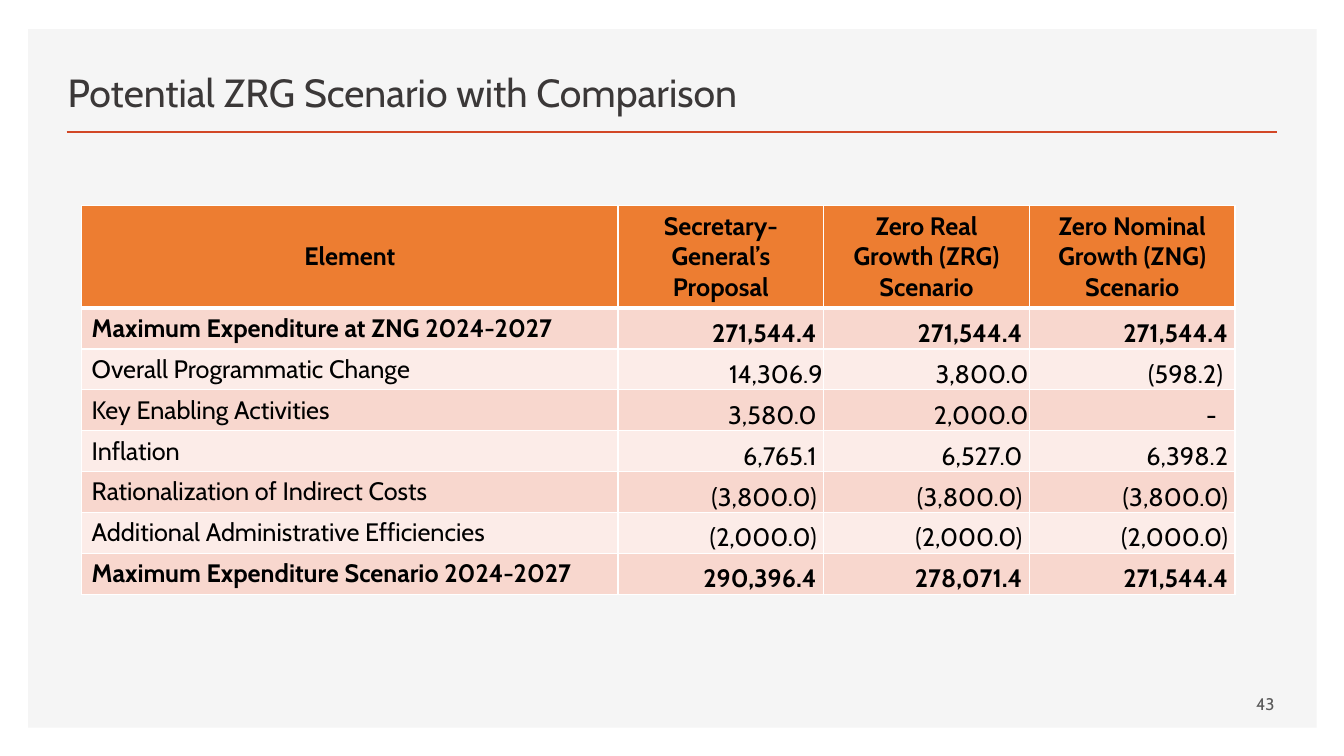
from dataclasses import dataclass

from lxml import etree
from pptx import Presentation
from pptx.dml.color import RGBColor
from pptx.enum.shapes import MSO_CONNECTOR, MSO_SHAPE
from pptx.enum.text import MSO_ANCHOR, MSO_AUTO_SIZE, PP_ALIGN
from pptx.oxml.ns import qn
from pptx.util import Emu, Pt

LEFT, CENTER, RIGHT = PP_ALIGN.LEFT, PP_ALIGN.CENTER, PP_ALIGN.RIGHT
TOP, MIDDLE, BOTTOM = MSO_ANCHOR.TOP, MSO_ANCHOR.MIDDLE, MSO_ANCHOR.BOTTOM
RECT, STRAIGHT = MSO_SHAPE.RECTANGLE, MSO_CONNECTOR.STRAIGHT
NO_AUTOFIT = MSO_AUTO_SIZE.NONE
EMU_PER_PX = 9144


@dataclass(frozen=True)
class Theme:
    font: str = "Cabin"
    panel: str = "F5F5F5"
    rule: str = "D24726"
    title: str = "3B3838"
    number: str = "595959"
    text: str = "000000"
    header: str = "ED7D31"
    bands: tuple[str, str] = ("F8D7CE", "FCECE8")
    border: str = "FFFFFF"
    title_size: int = 28
    table_size: int = 18
    number_size: int = 12


@dataclass(frozen=True)
class Amount:
    text: str
    gap: int = 7


@dataclass(frozen=True)
class BudgetRow:
    element: str
    amounts: tuple[Amount, Amount, Amount]
    bold: bool = False


THEME = Theme()
COLUMN_WIDTHS = (532, 204, 204, 204)
HEADER_HEIGHT, ROW_HEIGHT = 100, 40
CELL_MARGINS = (10, 5, 10, 5)
HEADERS = (
    "Element",
    "Secretary-General’s Proposal",
    "Zero Real Growth (ZRG) Scenario",
    "Zero Nominal Growth (ZNG) Scenario",
)
ROWS = (
    BudgetRow("Maximum Expenditure at ZNG 2024-2027", (Amount("271,544.4"),) * 3, True),
    BudgetRow("Overall Programmatic Change",
              (Amount("14,306.9", 1), Amount("3,800.0", 1), Amount("(598.2)", 12))),
    BudgetRow("Key Enabling Activities",
              (Amount("3,580.0"), Amount("2,000.0", 1), Amount("-", 18))),
    BudgetRow("Inflation", (Amount("6,765.1"), Amount("6,527.0"), Amount("6,398.2"))),
    BudgetRow("Rationalization of Indirect Costs", (Amount("(3,800.0)"),) * 3),
    BudgetRow("Additional Administrative Efficiencies", (Amount("(2,000.0)"),) * 3),
    BudgetRow("Maximum Expenditure Scenario 2024-2027",
              (Amount("290,396.4"), Amount("278,071.4"), Amount("271,544.4")), True),
)


def px(n: int) -> Emu:
    return Emu(n * EMU_PER_PX)


def rgb(color: str) -> RGBColor:
    return RGBColor.from_string(color)


def write(tf, text: str, size: int, color: str, align=LEFT, bold: bool = False) -> None:
    p = tf.paragraphs[0]
    p.text = text
    p.alignment = align
    p.font.name = THEME.font
    p.font.size = Pt(size)
    p.font.bold = bold
    p.font.color.rgb = rgb(color)


def add_panel(slide) -> None:
    sp = slide.shapes.add_shape(RECT, px(28), px(29), px(1278), px(693))
    sp.shadow.inherit = False
    sp.fill.solid()
    sp.fill.fore_color.rgb = rgb(THEME.panel)
    sp.line.fill.background()


def add_rule(slide) -> None:
    rule = slide.shapes.add_connector(STRAIGHT, px(66), px(131), px(1267), px(131))
    rule.line.color.rgb = rgb(THEME.rule)
    rule.line.width = Pt(2)
    etree.SubElement(rule._element.spPr, qn("a:effectLst"))


def place_title(slide, text: str) -> None:
    title = slide.shapes.title
    slide.shapes._spTree.append(title._element)
    title.left, title.top, title.width, title.height = px(57), px(49), px(937), px(70)
    tf = title.text_frame
    tf.auto_size = NO_AUTOFIT
    tf.vertical_anchor = BOTTOM
    write(tf, text, THEME.title_size, THEME.title)


def set_borders(cell, top: int, bottom: int) -> None:
    tc_pr = cell._tc.get_or_add_tcPr()
    widths = {"a:lnL": 1, "a:lnR": 1, "a:lnT": top, "a:lnB": bottom}
    for i, (tag, width) in enumerate(widths.items()):
        ln = etree.Element(qn(tag), w=str(Pt(width)))
        fill = etree.SubElement(ln, qn("a:solidFill"))
        etree.SubElement(fill, qn("a:srgbClr"), val=THEME.border)
        tc_pr.insert(i, ln)


def format_cell(cell, text: str, fill: str, align, anchor, bold: bool,
                margins: tuple[int, int, int, int] = CELL_MARGINS,
                top: int = 1, bottom: int = 1) -> None:
    write(cell.text_frame, text, THEME.table_size, THEME.text, align, bold)
    cell.vertical_anchor = anchor
    (cell.margin_left, cell.margin_top,
     cell.margin_right, cell.margin_bottom) = map(px, margins)
    cell.fill.solid()
    cell.fill.fore_color.rgb = rgb(fill)
    set_borders(cell, top, bottom)


def add_budget_table(slide) -> None:
    height = HEADER_HEIGHT + ROW_HEIGHT * len(ROWS)
    table = slide.shapes.add_table(
        len(ROWS) + 1, len(HEADERS), px(81), px(204), px(sum(COLUMN_WIDTHS)), px(height)
    ).table
    for column, width in zip(table.columns, COLUMN_WIDTHS):
        column.width = px(width)
    table.rows[0].height = px(HEADER_HEIGHT)
    for c, header in enumerate(HEADERS):
        format_cell(table.cell(0, c), header, THEME.header, CENTER, MIDDLE, True, bottom=3)
    for r, row in enumerate(ROWS, 1):
        table.rows[r].height = px(ROW_HEIGHT)
        fill = THEME.bands[(r - 1) % 2]
        top = 3 if r == 1 else 1
        format_cell(table.cell(r, 0), row.element, fill, LEFT, TOP, row.bold, top=top)
        for c, amount in enumerate(row.amounts, 1):
            format_cell(table.cell(r, c), amount.text, fill, RIGHT, BOTTOM, row.bold,
                        (1, 1, amount.gap, 0), top)


def add_page_number(slide, number: str) -> None:
    tf = slide.shapes.add_textbox(px(916), px(678), px(358), px(40)).text_frame
    tf.word_wrap = True
    tf.vertical_anchor = MIDDLE
    write(tf, number, THEME.number_size, THEME.number, RIGHT)


def main() -> None:
    prs = Presentation()
    prs.slide_width, prs.slide_height = px(1333), px(750)
    slide = prs.slides.add_slide(prs.slide_layouts[5])
    add_panel(slide)
    add_rule(slide)
    place_title(slide, "Potential ZRG Scenario with Comparison")
    add_budget_table(slide)
    add_page_number(slide, "43")
    prs.save("out.pptx")


if __name__ == "__main__":
    main()
